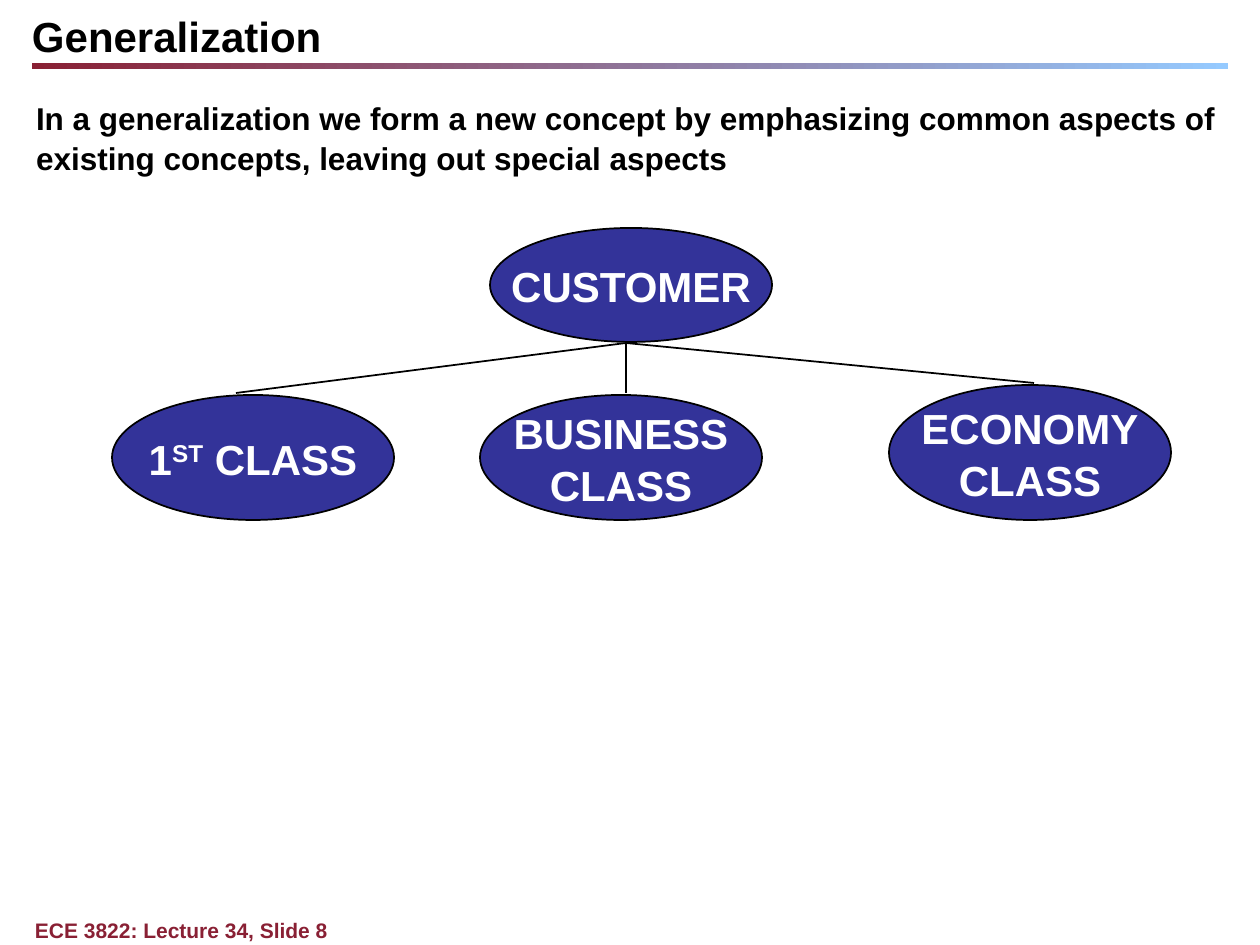
import pptx
import pptx.dml.color
import pptx.enum.shapes
import pptx.enum.text
import pptx.util
from lxml import etree

PX = 914400 / 126
DRAWING = "http://schemas.openxmlformats.org/drawingml/2006/main"
BLACK, WHITE, MAROON, SKY, INDIGO = "000000", "FFFFFF", "892034", "95CAFF", "333399"
LEFT = pptx.enum.text.PP_ALIGN.LEFT
CENTER = pptx.enum.text.PP_ALIGN.CENTER
TOP = pptx.enum.text.MSO_ANCHOR.TOP
MIDDLE = pptx.enum.text.MSO_ANCHOR.MIDDLE


def emu(*lengths):
    """Turn px lengths into EMU."""
    return [pptx.util.Emu(round(length * PX)) for length in lengths]


def rgb(value):
    """Turn a hex string into a colour."""
    return pptx.dml.color.RGBColor.from_string(value)


def style_text(frame, size, color, align=LEFT, anchor=TOP, wrap=True, insets=(0, 0)):
    """Format the frame and every run in it."""
    frame.auto_size = pptx.enum.text.MSO_AUTO_SIZE.NONE
    frame.word_wrap = wrap
    frame.vertical_anchor = anchor
    frame.margin_left = frame.margin_right = emu(insets[0])[0]
    frame.margin_top = frame.margin_bottom = emu(insets[1])[0]
    for paragraph in frame.paragraphs:
        paragraph.alignment = align
        paragraph.line_spacing = 1.05
        paragraph.space_before = pptx.util.Pt(0)
        for run in paragraph.runs:
            run.font.name = "Arial"
            run.font.size = pptx.util.Pt(size)
            run.font.bold = True
            run.font.color.rgb = rgb(color)


def fill_placeholder(placeholder, box, text, size):
    """Move a placeholder to the box and set its text without a bullet."""
    placeholder.left, placeholder.top, placeholder.width, placeholder.height = emu(*box)
    placeholder.text_frame.text = text
    properties = placeholder.text_frame.paragraphs[0]._p.get_or_add_pPr()
    properties.set("marL", "0")
    properties.set("indent", "0")
    etree.SubElement(properties, f"{{{DRAWING}}}buNone")
    style_text(placeholder.text_frame, size, BLACK)


def add_header(slide, box):
    """Place the title and the gradient rule under it."""
    left, top, width, height = box
    fill_placeholder(slide.shapes.title, (left, top, width, 50), "Generalization", 24)
    rule = slide.shapes.add_shape(
        pptx.enum.shapes.MSO_SHAPE.RECTANGLE, *emu(left, top + height - 6, width, 6))
    rule.shadow.inherit = False
    rule.line.fill.background()
    rule.fill.gradient()
    rule.fill.gradient_angle = 0
    for stop, color in zip(rule.fill.gradient_stops, (MAROON, SKY)):
        stop.color.rgb = rgb(color)


def add_concept(slide, box, label):
    """Place an ellipse whose label marks superscripts between carets."""
    concept = slide.shapes.add_shape(pptx.enum.shapes.MSO_SHAPE.OVAL, *emu(*box))
    concept.shadow.inherit = False
    concept.fill.solid()
    concept.fill.fore_color.rgb = rgb(INDIGO)
    concept.line.color.rgb = rgb(BLACK)
    concept.line.width = pptx.util.Pt(1)
    base, *parts = label.split("^")
    concept.text_frame.text = base
    for index, part in enumerate(parts):
        run = concept.text_frame.paragraphs[0].add_run()
        run.text = part
        if index % 2 == 0:
            run.font._element.set("baseline", "30000")
    style_text(concept.text_frame, 24, WHITE, CENTER, MIDDLE, False, (13, 6))


def add_branch(slide, start, end):
    """Draw a thin line between two points."""
    branch = slide.shapes.add_connector(
        pptx.enum.shapes.MSO_CONNECTOR.STRAIGHT, *emu(*start, *end))
    branch.line.color.rgb = rgb(BLACK)
    branch.line.width = pptx.util.Pt(1)
    etree.SubElement(branch._element.spPr, f"{{{DRAWING}}}effectLst")


def add_hierarchy(slide, box):
    """Place the general concept, its special cases and the branches."""
    left, top, width, height = box
    concept_width = 282
    add_concept(slide, (left + 378, top, concept_width, 114), "CUSTOMER")
    special_cases = [
        ("1^ST^ CLASS", 0, 125, 124),
        ("BUSINESS\vCLASS", 368, 125, 514),
        ("ECONOMY\nCLASS", width - concept_width, 135, 922),
    ]
    for label, offset, case_height, branch_end in special_cases:
        case_top = top + height - case_height
        add_concept(slide, (left + offset, case_top, concept_width, case_height), label)
        add_branch(slide, (left + 514, top + 115), (left + branch_end, case_top - 2))


def add_footer(slide, box):
    """Place the lecture and slide number line."""
    footer = slide.shapes.add_textbox(*emu(*box))
    footer.text_frame.text = "ECE 3822: Lecture 34, Slide 8"
    style_text(footer.text_frame, 12, MAROON)


def main():
    """Build and save the slide."""
    deck = pptx.Presentation()
    deck.slide_width, deck.slide_height = emu(1260, 945)
    slide = deck.slides.add_slide(deck.slide_layouts[1])
    add_header(slide, (32, 8, 1196, 61))
    fill_placeholder(
        slide.placeholders[1], (36, 97, 1189, 77),
        "In a generalization we form a new concept by emphasizing common aspects of "
        "existing concepts, leaving out special aspects", 18)
    add_hierarchy(slide, (112, 228, 1059, 292))
    add_footer(slide, (35, 916, 1124, 25))
    deck.save("out.pptx")


if __name__ == "__main__":
    main()
